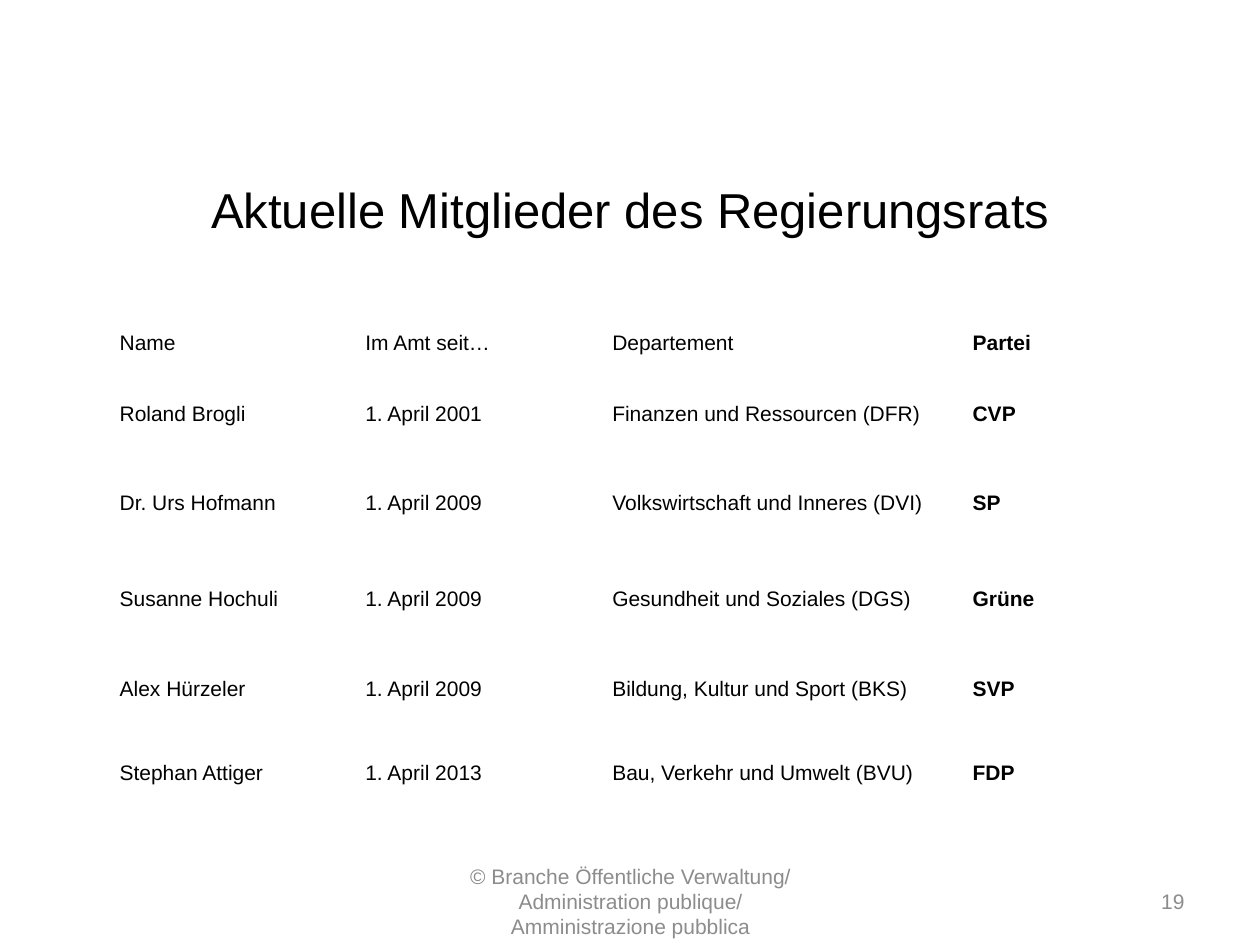
from pptx import Presentation
from pptx.dml.color import RGBColor
from pptx.enum.text import MSO_ANCHOR, PP_ALIGN
from pptx.util import Inches, Pt

BLACK = RGBColor(0x00, 0x00, 0x00)
GREY = RGBColor(0x8C, 0x8C, 0x8C)
MIDDLE = MSO_ANCHOR.MIDDLE
CENTER, RIGHT = PP_ALIGN.CENTER, PP_ALIGN.RIGHT
TITLE_ONLY = 5

TITLE_FONT = {"name": "Arial", "size": Pt(28)}
BODY_FONT = {"name": "Arial", "size": Pt(12)}

COLUMN_WIDTHS = [1.95, 1.96, 2.86, 1.5]
ROW_HEIGHTS = [0.26, 0.42, 0.71, 0.71, 0.81, 0.62, 0.71]
MEMBERS = [
    ("Name", "Im Amt seit…", "Departement", "Partei"),
    ("Roland Brogli", "1. April 2001", "Finanzen und Ressourcen (DFR)", "CVP"),
    ("Dr. Urs Hofmann", "1. April 2009", "Volkswirtschaft und Inneres (DVI)", "SP"),
    ("Susanne Hochuli", "1. April 2009", "Gesundheit und Soziales (DGS)", "Grüne"),
    ("Alex Hürzeler", "1. April 2009", "Bildung, Kultur und Sport (BKS)", "SVP"),
    ("Stephan Attiger", "1. April 2013", "Bau, Verkehr und Umwelt (BVU)", "FDP"),
]


def format_font(font, color, **values):
    for attribute, value in values.items():
        setattr(font, attribute, value)
    font.color.rgb = color


def write(frame, text, align, color, font_values):
    frame.word_wrap = True
    frame.vertical_anchor = MIDDLE
    paragraph = frame.paragraphs[0]
    paragraph.alignment = align
    run = paragraph.add_run()
    run.text = text
    format_font(run.font, color, **font_values)


def add_title(slide, text):
    title = slide.shapes.title
    title.left, title.top = Inches(0.5), Inches(0.84)
    title.width, title.height = Inches(9), Inches(1.18)
    # The title sits one line lower than the middle of its box.
    title.text_frame.margin_top = Inches(0.5)
    write(title.text_frame, text, CENTER, BLACK, TITLE_FONT)


def add_footer_text(slide, text, left, width, align):
    box = slide.shapes.add_textbox(
        Inches(left), Inches(6.95), Inches(width), Inches(0.4))
    write(box.text_frame, text, align, GREY, BODY_FONT)


def clear_cell(cell, margin_right):
    cell.fill.background()
    cell.vertical_anchor = MIDDLE
    cell.margin_left, cell.margin_right = Inches(0.04), Inches(margin_right)
    cell.margin_top = cell.margin_bottom = Inches(0.02)
    # An empty cell would otherwise grow to the default text size.
    end_format = cell.text_frame.paragraphs[0]._p.get_or_add_endParaRPr()
    end_format.set("sz", "1200")


def add_member_table(slide):
    table = slide.shapes.add_table(
        len(ROW_HEIGHTS), len(COLUMN_WIDTHS), Inches(0.91), Inches(2.25),
        Inches(sum(COLUMN_WIDTHS)), Inches(sum(ROW_HEIGHTS))).table
    table.first_row = table.horz_banding = False
    for column, width in zip(table.columns, COLUMN_WIDTHS):
        column.width = Inches(width)
    for row_index, height in enumerate(ROW_HEIGHTS):
        table.rows[row_index].height = Inches(height)
        for cell in table.rows[row_index].cells:
            clear_cell(cell, 0.07 if row_index == 1 else 0.04)
    table.cell(0, 0).merge(table.cell(0, len(COLUMN_WIDTHS) - 1))

    party_column = len(COLUMN_WIDTHS) - 1
    for row_index, member in enumerate(MEMBERS, start=1):
        for column_index, text in enumerate(member):
            run = table.cell(row_index, column_index).text_frame.paragraphs[0].add_run()
            run.text = text
            format_font(run.font, BLACK, bold=column_index == party_column, **BODY_FONT)


def main():
    presentation = Presentation()
    presentation.slide_width, presentation.slide_height = Inches(10), Inches(7.5)
    slide = presentation.slides.add_slide(presentation.slide_layouts[TITLE_ONLY])
    add_title(slide, "Aktuelle Mitglieder des Regierungsrats")
    add_member_table(slide)
    add_footer_text(slide, "19", 7.17, 2.33, RIGHT)
    add_footer_text(
        slide,
        "© Branche Öffentliche Verwaltung/ Administration publique/ "
        "Amministrazione pubblica",
        3.42, 3.17, CENTER)
    presentation.save("out.pptx")


if __name__ == "__main__":
    main()
